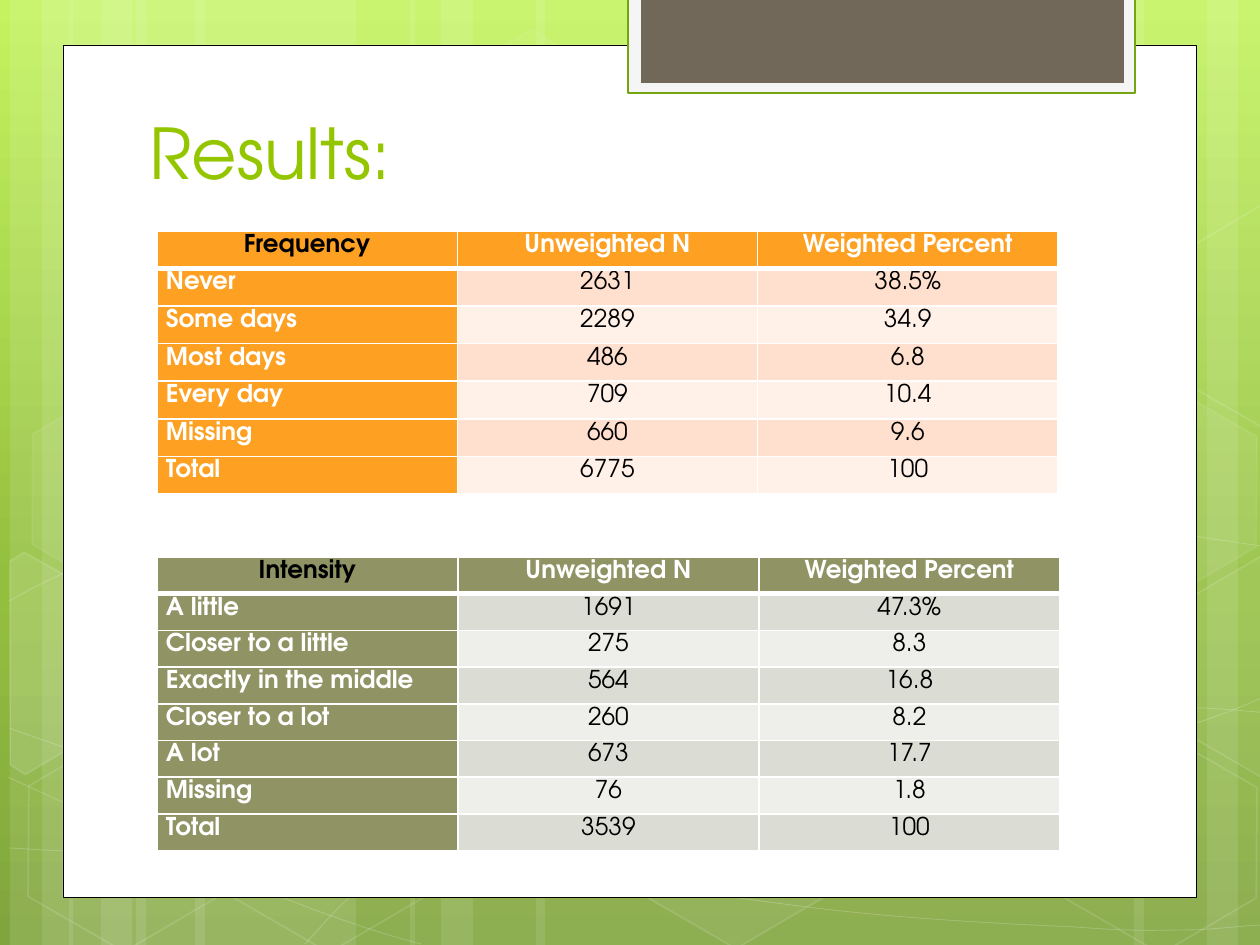
from copy import deepcopy
from math import cos, radians, sin
from typing import NamedTuple, Optional

from lxml.etree import SubElement
from pptx import Presentation
from pptx.dml.color import RGBColor
from pptx.enum.shapes import MSO_SHAPE
from pptx.enum.text import MSO_ANCHOR, PP_ALIGN
from pptx.oxml.ns import qn
from pptx.shapes.autoshape import Shape
from pptx.slide import Slide
from pptx.table import _Cell
from pptx.text.text import TextFrame
from pptx.util import Emu, Pt

SCALE = 914400 / 126
TILT = 30
FONT = "TeX Gyre Adventor"
WHITE = RGBColor(0xFF, 0xFF, 0xFF)
BLACK = RGBColor(0x00, 0x00, 0x00)
LIME = RGBColor(0x94, 0xC6, 0x00)
LEAF = RGBColor(0x74, 0xA5, 0x10)
PALE = RGBColor(0xF5, 0xF5, 0xF5)
BROWN = RGBColor(0x71, 0x68, 0x5A)
ORANGE = RGBColor(0xFE, 0xA0, 0x22)
PEACH = RGBColor(0xFF, 0xDF, 0xCD)
CREAM = RGBColor(0xFF, 0xF0, 0xE8)
OLIVE = RGBColor(0x90, 0x94, 0x65)
STONE = RGBColor(0xDB, 0xDC, 0xD3)
MIST = RGBColor(0xEE, 0xEE, 0xEA)
STOPS = [(0, RGBColor(0xC3, 0xF3, 0x5F)), (0.62, RGBColor(0x93, 0xBF, 0x3F)),
         (1, RGBColor(0x81, 0xA5, 0x3E))]


class Box(NamedTuple):
    x: int
    y: int
    w: int
    h: int


class Hex(NamedTuple):
    x: int
    y: int
    fill: int
    line: int


class Cut(NamedTuple):
    """A hexagon trimmed by the slide edge, and the pivot of its tilt."""
    hub: tuple
    points: list
    fill: int


class Grid(NamedTuple):
    box: Box
    head: RGBColor
    bands: tuple
    rows: list


BARS = [(136, 220), (10, 63), (42, 104), (195, 220), (69, 63), (101, 104),
        (924, 220), (1207, 63), (1134, 104), (536, 388), (410, 63), (441, 104)]

# Each curve is a start point, then two handles and an end point per piece.
CURVES = [
    [(9, 848), (77, 852), (145, 856), (239, 854), (334, 853), (451, 851), (577, 838),
     (703, 825), (882, 801), (998, 777), (1112, 753), (1231, 715), (1269, 694)],
    [(9, 601), (45, 581), (82, 562), (152, 543), (224, 524), (326, 496), (437, 488),
     (549, 479), (685, 478), (824, 488), (963, 498), (1193, 537), (1269, 547)],
    [(8, 777), (160, 847), (311, 916), (421, 944)],
    [(9, 728), (48, 742), (88, 756), (161, 776), (234, 795), (344, 827), (450, 848),
     (554, 869), (687, 892), (791, 905), (896, 919), (1008, 924), (1075, 927),
     (1140, 932), (1158, 930), (1191, 930), (1223, 929), (1246, 925), (1269, 925)],
    [(305, 944), (328, 919), (350, 893), (381, 871), (411, 848), (454, 823), (489, 805),
     (524, 788), (546, 780), (592, 767), (638, 754), (722, 737), (766, 728),
     (811, 719), (818, 719), (857, 717), (895, 713), (958, 709), (1000, 708),
     (1044, 707), (1116, 708), (1116, 708), (1116, 708), (1201, 708), (1201, 708),
     (1223, 709), (1245, 711), (1256, 712), (1268, 713), (1264, 712), (1268, 713)],
]

HEXES = [Hex(421, 45, 4, 8), Hex(626, 742, 6, 12), Hex(14, 745, 0, 12),
         Hex(18, 393, 7, 8), Hex(219, 746, 0, 12), Hex(949, 571, 10, 12),
         Hex(1051, 747, 0, 12), Hex(1051, 396, 7, 8)]

CUTS = [
    Cut((45, 674), [(10, 561), (24, 552), (121, 607), (120, 718), (25, 774),
                    (10, 765)], 10),
    Cut((1241, 655), [(1167, 611), (1261, 556), (1271, 562), (1271, 772), (1262, 777),
                      (1167, 722)], 4),
    Cut((1241, 304), [(1167, 261), (1261, 205), (1273, 212), (1271, 422), (1262, 427),
                      (1167, 372)], 0),
]

GRIDS = [
    Grid(Box(157, 231, 901, 263), ORANGE, (PEACH, CREAM), [
        ("Frequency", "Unweighted N", "Weighted Percent"),
        ("Never", "2631", "38.5%"), ("Some days", "2289", "34.9"),
        ("Most days", "486", "6.8"), ("Every day", "709", "10.4"),
        ("Missing", "660", "9.6"), ("Total", "6775", "100")]),
    Grid(Box(157, 557, 903, 294), OLIVE, (STONE, MIST), [
        ("Intensity", "Unweighted N", "Weighted Percent"),
        ("A little", "1691", "47.3%"), ("Closer to a little", "275", "8.3"),
        ("Exactly in the middle", "564", "16.8"), ("Closer to a lot", "260", "8.2"),
        ("A lot", "673", "17.7"), ("Missing", "76", "1.8"), ("Total", "3539", "100")]),
]


def px(size: float) -> Emu:
    return Emu(round(size * SCALE))


def place(box: Box) -> list:
    return [px(side) for side in box]


def put(frame: TextFrame, text: str, *, size: int, color: RGBColor, bold: bool = False,
        align: PP_ALIGN = PP_ALIGN.LEFT, space: float = 1.0) -> None:
    para = frame.paragraphs[0]
    para.alignment, para.line_spacing = align, space
    run = para.add_run()
    run.text = text
    run.font.name, run.font.size, run.font.bold = FONT, Pt(size), bold
    run.font.color.rgb = color


def paint(shape: Shape, fill: Optional[RGBColor] = None, line: Optional[RGBColor] = None,
          width: float = 1) -> None:
    shape.shadow.inherit = False
    if fill is None:
        shape.fill.background()
    else:
        shape.fill.solid()
        shape.fill.fore_color.rgb = fill
    if line is None:
        shape.line.fill.background()
    else:
        shape.line.color.rgb = line
        shape.line.width = Pt(width)


def veil(shape: Shape, fill: int = 0, line: int = 0, width: float = 1) -> None:
    """Paint in white at the given percents of opacity."""
    paint(shape, WHITE if fill else None, WHITE if line else None, width)
    for part, share in (("", fill), ("a:ln/", line)):
        route = "/".join(qn(tag) for tag in f"{part}a:solidFill/a:srgbClr".split("/"))
        for color in shape.element.spPr.iterfind(route):
            SubElement(color, qn("a:alpha"), val=str(share * 1000))


def trace(slide: Slide, points: list, close: bool) -> Shape:
    pen = slide.shapes.build_freeform(*points[0], scale=SCALE)
    pen.add_line_segments(points[1:], close=close)
    return pen.convert_to_shape()


def curve(slide: Slide, knots: list) -> Shape:
    """Trace the knots, then join each three of them into a cubic piece."""
    shape = trace(slide, knots, False)
    route = shape.element.find(f".//{qn('a:path')}")
    legs = route.findall(qn("a:lnTo"))
    for i in range(0, len(legs), 3):
        piece = SubElement(route, qn("a:cubicBezTo"))
        for leg in legs[i:i + 3]:
            piece.append(leg[0])
            route.remove(leg)
    return shape


def turn(points: list, hub: tuple, angle: float) -> list:
    c, s = cos(radians(angle)), sin(radians(angle))
    return [(hub[0] + (x - hub[0]) * c - (y - hub[1]) * s,
             hub[1] + (x - hub[0]) * s + (y - hub[1]) * c) for x, y in points]


def block(slide: Slide, box: Box, kind: MSO_SHAPE = MSO_SHAPE.RECTANGLE) -> Shape:
    return slide.shapes.add_shape(kind, *place(box))


def wash(slide: Slide) -> None:
    """Fill the background with the green gradient."""
    fill = slide.background.fill
    fill.gradient()
    fill.gradient_angle = 270
    stops = slide.element.find(f".//{qn('a:gsLst')}")
    stops.append(deepcopy(stops[-1]))
    for stop, (spot, color) in zip(fill.gradient_stops, STOPS):
        stop.position, stop.color.rgb = spot, color


def edge(cell: _Cell, top: int, base: int) -> None:
    for side, width in (("L", 1), ("R", 1), ("T", top), ("B", base)):
        line = SubElement(cell._tc.get_or_add_tcPr(), qn(f"a:ln{side}"), w=str(Pt(width)))
        SubElement(SubElement(line, qn("a:solidFill")), qn("a:srgbClr"), val=str(WHITE))


def chart(slide: Slide, grid: Grid) -> None:
    """Draw one table of results."""
    count = len(grid.rows)
    table = slide.shapes.add_table(count, 3, *place(grid.box)).table
    table.first_row = table.horz_banding = False
    for col in table.columns:
        col.width = px(grid.box.w / 3)
    for r, row in enumerate(grid.rows):
        table.rows[r].height = px(grid.box.h / count)
        for c, text in enumerate(row):
            cell = table.cell(r, c)
            label = r == 0 or c == 0
            edge(cell, 3 if r == 1 else 1, 3 if r == 0 else 1)
            cell.fill.solid()
            cell.fill.fore_color.rgb = grid.head if label else grid.bands[(r - 1) % 2]
            cell.margin_left = cell.margin_right = px(9)
            cell.margin_top = cell.margin_bottom = 0
            put(cell.text_frame, text, size=14, bold=label, space=1.15,
                color=WHITE if label and (r or c) else BLACK,
                align=PP_ALIGN.LEFT if r and c == 0 else PP_ALIGN.CENTER)


def main() -> None:
    deck = Presentation()
    deck.slide_width, deck.slide_height = px(1260), px(945)
    slide = deck.slides.add_slide(deck.slide_layouts[6])
    wash(slide)
    for x, w in BARS:
        veil(block(slide, Box(x, 0, w, 945)), fill=10)
    for knots in CURVES:
        veil(curve(slide, knots), line=20, width=0.5)
    for item in HEXES:
        shape = block(slide, Box(item.x, item.y, 220, 192), MSO_SHAPE.HEXAGON)
        shape.adjustments[0] = 0.285
        shape.rotation = TILT
        veil(shape, item.fill, item.line)
    for cut in CUTS:
        shape = trace(slide, turn(cut.points, cut.hub, -TILT), True)
        shape.rotation = TILT
        veil(shape, cut.fill, 12)

    paint(block(slide, Box(63, 45, 1134, 853)), WHITE, BLACK, 0.5)
    paint(block(slide, Box(628, -2, 507, 95)), PALE, LEAF, 1.25)
    paint(block(slide, Box(641, -2, 483, 85)), BROWN)

    title = slide.shapes.add_textbox(*place(Box(137, 95, 968, 105))).text_frame
    title.word_wrap = True
    title.vertical_anchor = MSO_ANCHOR.BOTTOM
    put(title, "Results:", size=40, color=LIME)
    for grid in GRIDS:
        chart(slide, grid)
    deck.save("out.pptx")


if __name__ == "__main__":
    main()
